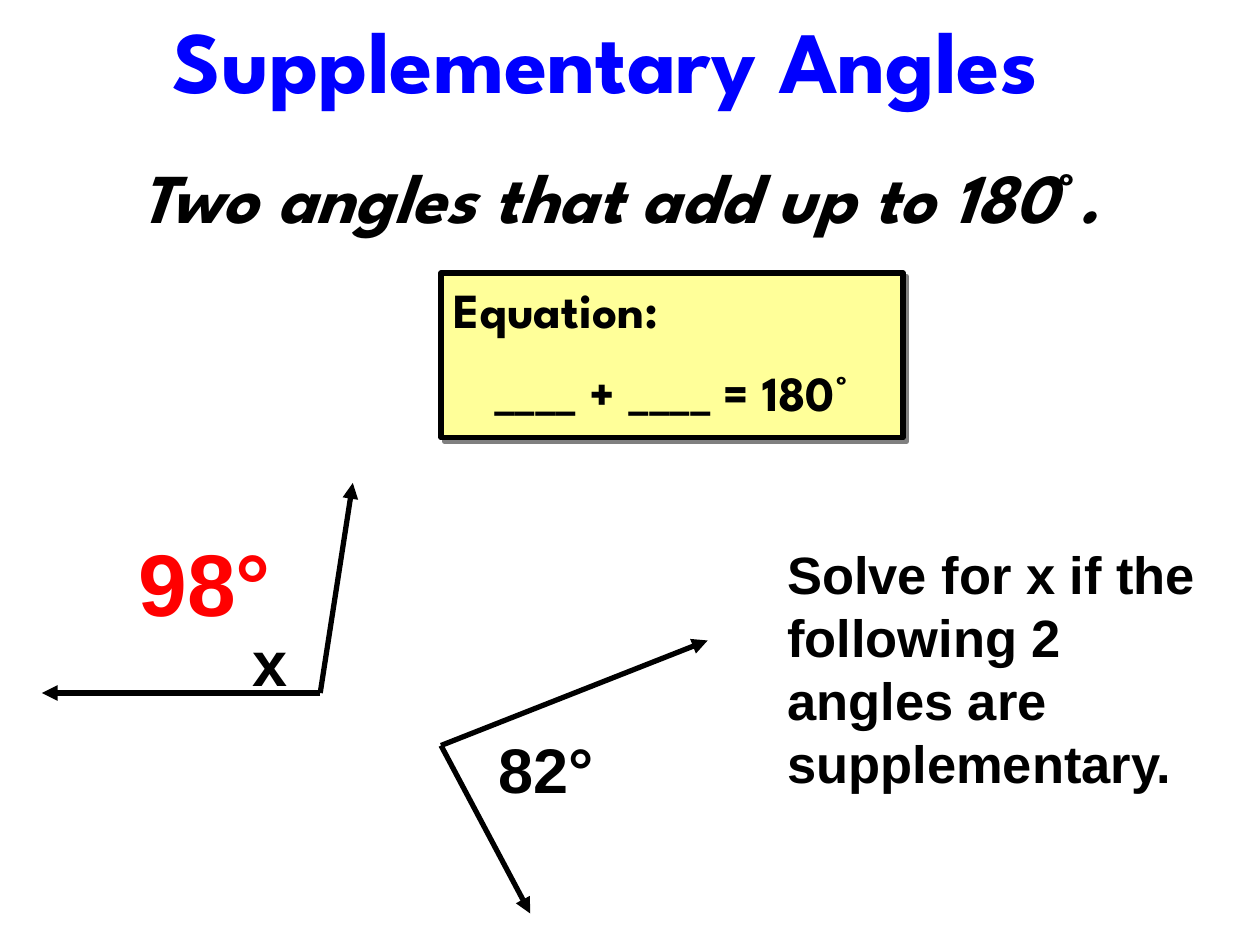
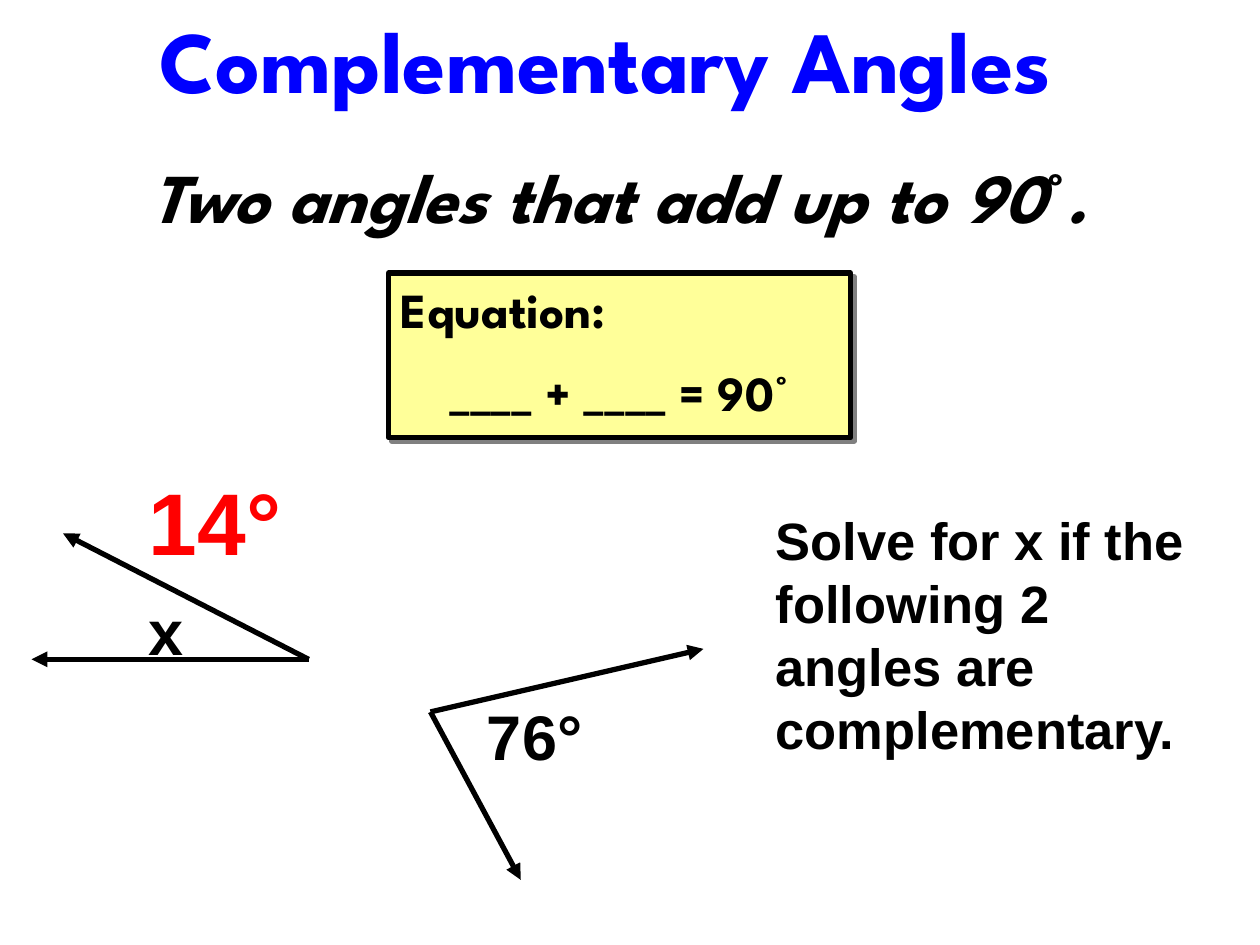
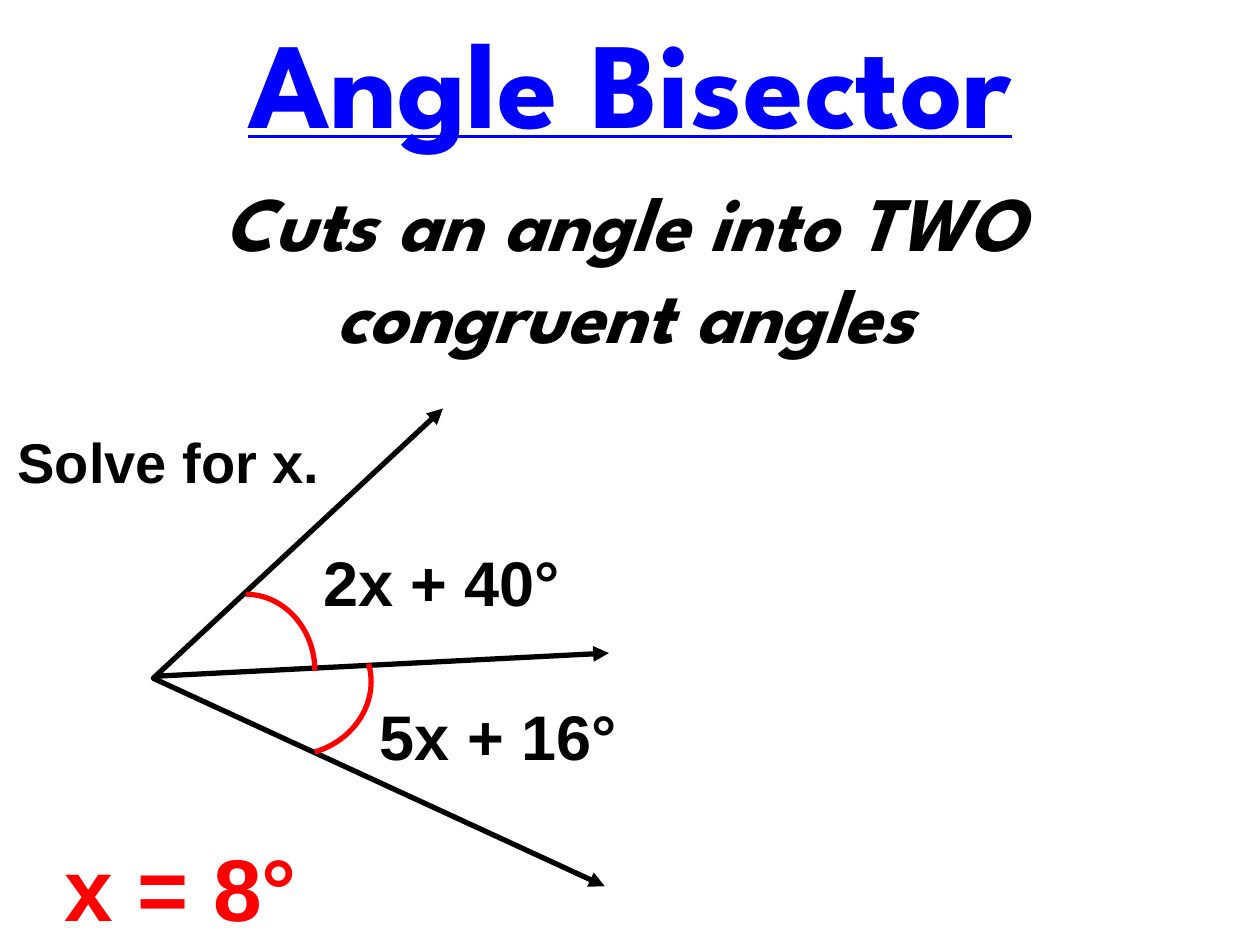
from pptx import Presentation
from pptx.dml.color import RGBColor
from pptx.enum.shapes import MSO_CONNECTOR, MSO_SHAPE
from pptx.enum.text import MSO_ANCHOR, MSO_AUTO_SIZE, PP_ALIGN
from pptx.oxml.ns import qn
from pptx.util import Inches, Pt
from lxml.etree import SubElement

BLUE = RGBColor(0x00, 0x00, 0xFF)
RED = RGBColor(0xFF, 0x00, 0x00)
BLACK = RGBColor(0x00, 0x00, 0x00)
YELLOW = RGBColor(0xFF, 0xFF, 0x99)
GRAY = RGBColor(0x80, 0x80, 0x80)

HEADING_FONT = "League Spartan"
LABEL_FONT = "Arial"
COLUMNS, ROWS = 120, 90
SLIDE_WIDTH, SLIDE_HEIGHT = Inches(10), Inches(7.5)
LINE_WIDTH = Pt(3)


def grid(column, row):
    return round(SLIDE_WIDTH * column / COLUMNS), round(SLIDE_HEIGHT * row / ROWS)


def place(shape, column, row, columns, rows):
    shape.left, shape.top = grid(column, row)
    shape.width, shape.height = grid(columns, rows)


def write_text(shape, *paragraphs, size, font=LABEL_FONT, color=BLACK, italic=False,
               underline=False, alignments=(PP_ALIGN.LEFT,), gap=0.5):
    frame = shape.text_frame
    frame.word_wrap = True
    frame.auto_size = MSO_AUTO_SIZE.NONE
    frame.vertical_anchor = MSO_ANCHOR.TOP
    for index, (text, alignment) in enumerate(zip(paragraphs, alignments)):
        paragraph = frame.add_paragraph() if index else frame.paragraphs[0]
        paragraph.alignment = alignment
        paragraph.space_before = Pt(size * gap)
        before, degree, after = text.partition("°")
        parts = [(before, True), (degree, False), (after, True)] if italic else [(text, False)]
        for part, slanted in parts:
            if part:
                run = paragraph.add_run()
                run.text = part
                run.font.name = font
                run.font.size = Pt(size)
                run.font.bold = True
                run.font.italic = slanted
                run.font.underline = underline
                run.font.color.rgb = color


def add_label(slide, text, column, row, columns=16, rows=8.4, size=36, color=BLACK):
    label = slide.shapes.add_textbox(*grid(column, row), *grid(columns, rows))
    write_text(label, text, size=size, color=color)


def add_answer(slide, text, column, row):
    add_label(slide, text, column, row, columns=30, rows=11.2, size=50, color=RED)


def style_line(shape, color=BLACK, arrowheads=()):
    shape.line.color.rgb = color
    shape.line.width = LINE_WIDTH
    for end in arrowheads:
        SubElement(shape.line._get_or_add_ln(), qn(f"a:{end}"), type="triangle")


def add_ray(slide, vertex, tip):
    ray = slide.shapes.add_connector(MSO_CONNECTOR.STRAIGHT, *grid(*vertex), *grid(*tip))
    style_line(ray, arrowheads=["tailEnd"])
    SubElement(ray._element.spPr, qn("a:effectLst"))


def add_angle(slide, vertex, *tips):
    for tip in tips:
        add_ray(slide, vertex, tip)


def add_outer_rays(slide, first_tip, vertex, second_tip):
    builder = slide.shapes.build_freeform(*grid(*first_tip))
    builder.add_line_segments([grid(*vertex), grid(*second_tip)], close=False)
    rays = builder.convert_to_shape()
    rays.shadow.inherit = False
    rays.fill.background()
    style_line(rays, arrowheads=["headEnd", "tailEnd"])


def add_arc(slide, column, row, rotation=0):
    arc = slide.shapes.add_shape(MSO_SHAPE.ARC, *grid(column, row), *grid(13.2, 14.6))
    arc.shadow.inherit = False
    arc.fill.background()
    arc.rotation = rotation
    style_line(arc, RED)


def add_equation(slide, total, column):
    box = slide.shapes.add_shape(MSO_SHAPE.RECTANGLE, *grid(column, 26), *grid(44, 15.7))
    box.fill.solid()
    box.fill.fore_color.rgb = YELLOW
    style_line(box)
    box.shadow.inherit = False
    effects = box._element.spPr.find(qn("a:effectLst"))
    shadow = SubElement(effects, qn("a:outerShdw"), dist=str(Pt(2.8)), dir=str(45 * 60000),
                        algn="ctr", rotWithShape="0")
    SubElement(shadow, qn("a:srgbClr"), val=str(GRAY))
    write_text(box, "Equation:", f"____ + ____ = {total}", size=28, font=HEADING_FONT,
               alignments=(PP_ALIGN.LEFT, PP_ALIGN.CENTER))


def add_topic_slide(presentation, title, definition, title_area, definition_area,
                    title_size=50, definition_size=40, underline=False):
    slide = presentation.slides.add_slide(presentation.slide_layouts[0])
    heading, subtitle = slide.shapes.title, slide.placeholders[1]
    place(heading, *title_area)
    place(subtitle, *definition_area)
    write_text(heading, title, size=title_size, font=HEADING_FONT, color=BLUE,
               underline=underline, alignments=[PP_ALIGN.CENTER])
    write_text(subtitle, definition, size=definition_size, font=HEADING_FONT, italic=True,
               alignments=[PP_ALIGN.CENTER], gap=0.2)
    return slide


def add_pair_slide(presentation, kind, total, equation_column, unknown_angle, known_angle,
                   x_position, answer, answer_position, known, known_position, task_position):
    slide = add_topic_slide(presentation, f"{kind} Angles", f"Two angles that add up to {total}.",
                            (0, 0, 115.4, 11.2), (7, 14, 104, 9))
    add_answer(slide, answer, *answer_position)
    add_angle(slide, *unknown_angle)
    add_label(slide, known, *known_position)
    add_label(slide, "x", *x_position)
    add_label(slide, f"Solve for x if the following 2 angles are {kind.lower()}.",
              *task_position, columns=41.3, rows=25.2, size=30)
    add_angle(slide, *known_angle)
    add_equation(slide, total, equation_column)


def add_bisector_slide(presentation):
    slide = add_topic_slide(presentation, "Angle Bisector",
                            "Cuts an angle into TWO congruent angles",
                            (0, 0, COLUMNS, 15.2), (3, 16, 113, 25),
                            title_size=70, definition_size=44, underline=True)
    add_answer(slide, "x = 8°", 5, 78.8)
    add_ray(slide, (14.9, 64.4), (58, 62.2))
    add_label(slide, "5x + 16°", 35, 65.8, columns=25)
    add_label(slide, "2x + 40°", 29.6, 51.2, columns=25.4)
    add_label(slide, "Solve for x.", 0.5, 40.1, columns=39, rows=7.7, size=32)
    add_outer_rays(slide, (42.2, 38.9), (14.6, 64.6), (57.6, 84.4))
    add_arc(slide, 16.8, 56.6)
    add_arc(slide, 21.5, 58, rotation=73.5)


def main():
    presentation = Presentation()
    presentation.slide_width, presentation.slide_height = SLIDE_WIDTH, SLIDE_HEIGHT
    add_pair_slide(presentation, "Supplementary", "180°", equation_column=42,
                   unknown_angle=[(30.5, 66), (4, 66), (33.6, 46)],
                   known_angle=[(42, 71), (67.4, 61), (50.5, 87)],
                   x_position=(22.9, 58.8), answer="98°", answer_position=(12, 49.8),
                   known="82°", known_position=(46.3, 69), task_position=(73.8, 51))
    add_pair_slide(presentation, "Complementary", "90°", equation_column=37,
                   unknown_angle=[(29.4, 62.8), (3, 62.8), (6, 50.8)],
                   known_angle=[(41, 67.8), (67, 61.8), (49.6, 83.8)],
                   x_position=(13, 55.8), answer="14°", answer_position=(13, 44),
                   known="76°", known_position=(45.2, 65.8), task_position=(72.7, 47.8))
    add_bisector_slide(presentation)
    presentation.save("out.pptx")


if __name__ == "__main__":
    main()
